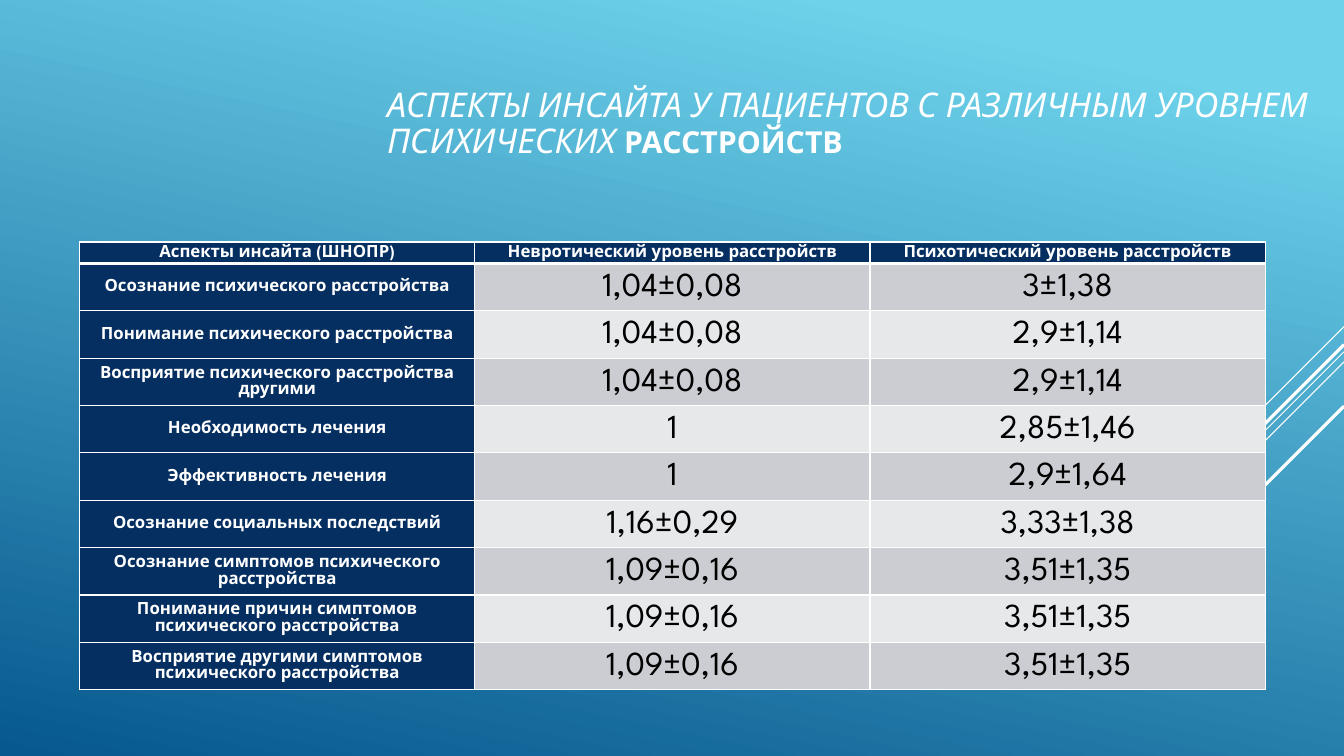
from lxml import etree
from pptx import Presentation
from pptx.dml.color import RGBColor
from pptx.enum.shapes import MSO_CONNECTOR
from pptx.enum.text import MSO_ANCHOR, PP_ALIGN
from pptx.oxml.ns import qn
from pptx.util import Inches, Pt

CENTER = PP_ALIGN.CENTER
MIDDLE = MSO_ANCHOR.MIDDLE
STRAIGHT = MSO_CONNECTOR.STRAIGHT

FONT = "League Spartan"
WHITE = RGBColor(0xFF, 0xFF, 0xFF)
BLACK = RGBColor(0, 0, 0)
NAVY = RGBColor(0x05, 0x2F, 0x61)
BANDS = (RGBColor(0xCC, 0xCD, 0xD2), RGBColor(0xE7, 0xE8, 0xEA))
GRADIENT = ((0.1, RGBColor(0x6E, 0xD2, 0xEB)), (1, RGBColor(0x06, 0x58, 0x8E)))

SLIDE_WIDTH, SLIDE_HEIGHT = 13.33, 7.5

# text, size, italic, bold
TITLE = (
    ("АСПЕКТЫ ИНСАЙТА У ПАЦИЕНТОВ С РАЗЛИЧНЫМ УРОВНЕМ ПСИХИЧЕСКИХ ", 24.3, True, False),
    ("РАССТРОЙСТВ", 21.6, False, True),
)
ROWS = (
    ("Аспекты инсайта (ШНОПР)", "Невротический уровень расстройств",
     "Психотический уровень расстройств"),
    ("Осознание психического расстройства", "1,04±0,08", "3±1,38"),
    ("Понимание психического расстройства", "1,04±0,08", "2,9±1,14"),
    ("Восприятие психического расстройства другими", "1,04±0,08", "2,9±1,14"),
    ("Необходимость лечения", "1", "2,85±1,46"),
    ("Эффективность лечения", "1", "2,9±1,64"),
    ("Осознание социальных последствий", "1,16±0,29", "3,33±1,38"),
    ("Осознание симптомов психического расстройства", "1,09±0,16", "3,51±1,35"),
    ("Понимание причин симптомов психического расстройства", "1,09±0,16", "3,51±1,35"),
    ("Восприятие другими симптомов психического расстройства", "1,09±0,16", "3,51±1,35"),
)
COLUMN_WIDTH, HEADER_HEIGHT, ROW_HEIGHT = 3.92, 0.18, 0.47

# Diagonal rays from the right edge: start height, run to the left, line width
RAYS = ((3.24, 1, 0.75), (3.49, 3.26, 0.75), (3.59, 2.07, 0.75),
        (3.42, 1.91, 2.25), (4.03, 1.39, 2.25))


def paint_background(slide):
    fill = slide.background.fill
    fill.gradient()
    fill.gradient_angle = 360 - 102
    for stop, (position, color) in zip(fill.gradient_stops, GRADIENT):
        stop.position = position
        stop.color.rgb = color


def add_ray(slide, top, run, width):
    ray = slide.shapes.add_connector(
        STRAIGHT, Inches(SLIDE_WIDTH), Inches(top),
        Inches(SLIDE_WIDTH - run), Inches(top + run))
    ray.line.color.rgb = WHITE
    ray.line.width = Pt(width)
    etree.SubElement(ray._element.spPr, qn("a:effectLst"))


def add_title(slide):
    box = slide.shapes.add_textbox(Inches(3.74), Inches(0.69), Inches(9.42), Inches(1.46))
    frame = box.text_frame
    frame.word_wrap = True
    frame.vertical_anchor = MIDDLE
    frame.margin_bottom = Inches(0.42)
    paragraph = frame.paragraphs[0]
    paragraph.line_spacing = 0.9
    paragraph.font.name = FONT
    paragraph.font.color.rgb = WHITE
    for text, size, italic, bold in TITLE:
        run = paragraph.add_run()
        run.text = text
        font = run.font
        font.name = FONT
        font.color.rgb = WHITE
        font.size, font.italic, font.bold = Pt(size), italic, bold


def add_borders(cell, row):
    properties = cell._tc.get_or_add_tcPr()
    widths = {"L": 1, "R": 1, "T": 3 if row == 1 else 1, "B": 3 if row == 0 else 1}
    for side, width in widths.items():
        line = etree.SubElement(properties, qn(f"a:ln{side}"), w=str(Pt(width)))
        fill = etree.SubElement(line, qn("a:solidFill"))
        etree.SubElement(fill, qn("a:srgbClr"), val=str(WHITE))


def fill_cell(cell, text, row, column):
    is_label = row == 0 or column == 0
    add_borders(cell, row)
    cell.fill.solid()
    cell.fill.fore_color.rgb = NAVY if is_label else BANDS[(row - 1) % 2]
    cell.vertical_anchor = MIDDLE
    cell.margin_left = cell.margin_right = Inches(0.07)
    cell.margin_top = cell.margin_bottom = 0
    paragraph = cell.text_frame.paragraphs[0]
    run = paragraph.add_run()
    run.text = text
    paragraph.alignment = CENTER
    paragraph.line_spacing = 1.07
    for font in (paragraph.font, run.font):
        font.name = FONT
        font.size = Pt(12 if is_label else 24)
        font.bold = is_label
        font.color.rgb = WHITE if is_label else BLACK


def add_insight_table(slide):
    columns = len(ROWS[0])
    height = HEADER_HEIGHT + ROW_HEIGHT * (len(ROWS) - 1)
    table = slide.shapes.add_table(
        len(ROWS), columns, Inches(0.79), Inches(2.4),
        Inches(COLUMN_WIDTH * columns), Inches(height)).table
    for column in table.columns:
        column.width = Inches(COLUMN_WIDTH)
    for row, texts in enumerate(ROWS):
        table.rows[row].height = Inches(ROW_HEIGHT if row else HEADER_HEIGHT)
        for column, text in enumerate(texts):
            fill_cell(table.cell(row, column), text, row, column)


def main():
    presentation = Presentation()
    presentation.slide_width = Inches(SLIDE_WIDTH)
    presentation.slide_height = Inches(SLIDE_HEIGHT)
    slide = presentation.slides.add_slide(presentation.slide_layouts[6])
    paint_background(slide)
    for ray in RAYS:
        add_ray(slide, *ray)
    add_title(slide)
    add_insight_table(slide)
    presentation.save("out.pptx")


if __name__ == "__main__":
    main()
